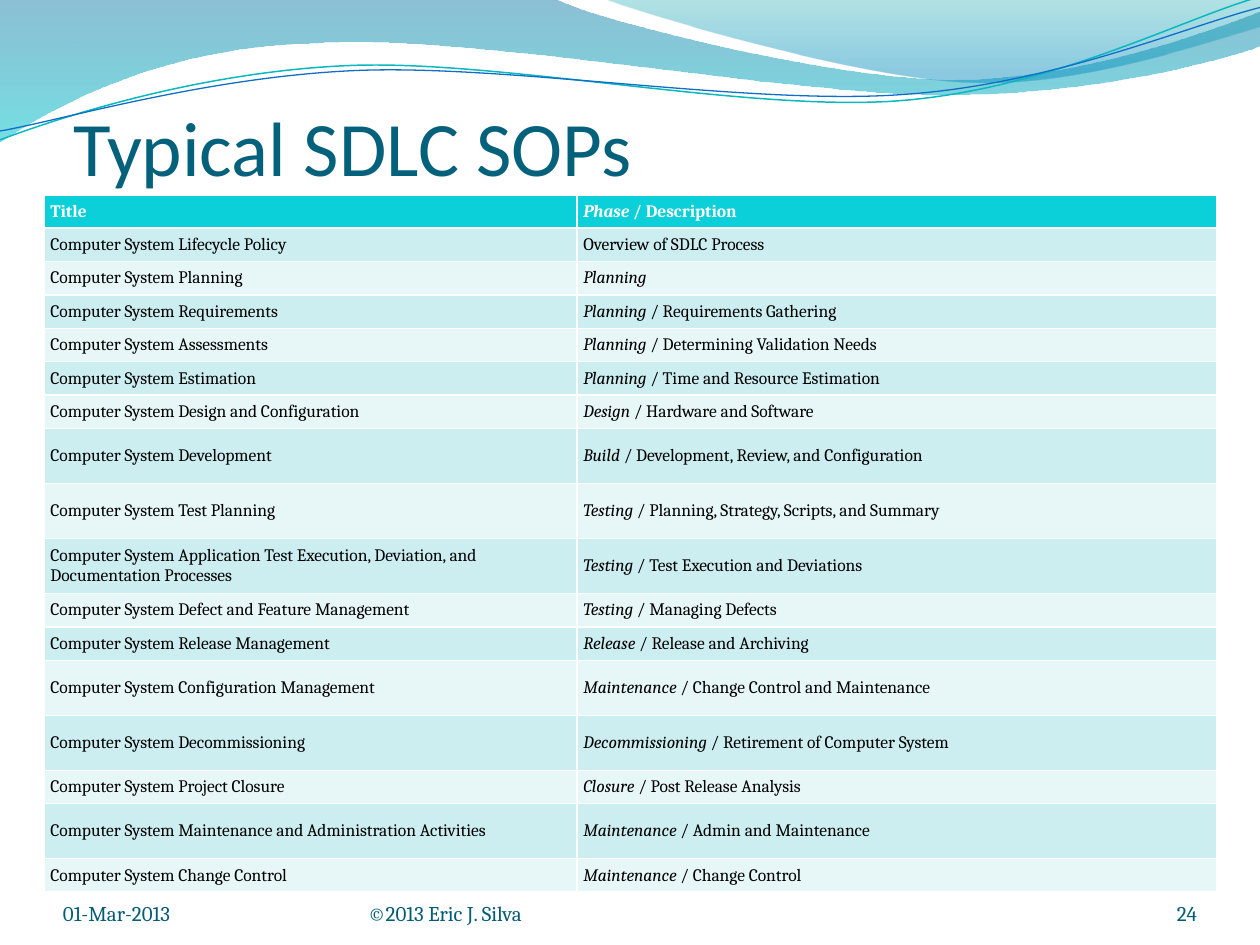
import math
from dataclasses import dataclass

from lxml import etree
from pptx import Presentation
from pptx.dml.color import RGBColor
from pptx.enum import text
from pptx.oxml import ns
from pptx.util import Inches, Pt


@dataclass(frozen=True)
class Theme:
    heading: str = "Calibri"
    body: str = "Cambria"
    title_size: int = 44
    cell_size: int = 10
    footer_size: int = 12
    title: str = "04617B"
    footer: str = "045D75"
    white: str = "FFFFFF"
    black: str = "000000"
    header: str = "0BD0D9"
    bands: tuple = ("CCEEF1", "E7F7F8")
    wide_wave: tuple = ((0, "0074A1", 45), (1, "00C6CF", 55))
    right_wave: tuple = ((0, "00A1A9", 30), (0.8, "008BBF", 45))
    teal_line: str = "0AB8BF"
    blue_line: str = "0F6FC6"


T = Theme()

ROWS = [
    ("Computer System Lifecycle Policy", "", "Overview of SDLC Process"),
    ("Computer System Planning", "Planning", ""),
    ("Computer System Requirements", "Planning", " / Requirements Gathering"),
    ("Computer System Assessments", "Planning", " / Determining Validation Needs"),
    ("Computer System Estimation", "Planning", " / Time and Resource Estimation"),
    ("Computer System Design and Configuration", "Design", " / Hardware and Software"),
    ("Computer System Development", "Build", " / Development, Review, and Configuration"),
    ("Computer System Test Planning", "Testing", " / Planning, Strategy, Scripts, and Summary"),
    ("Computer System Application Test Execution, Deviation, and Documentation Processes",
     "Testing", " / Test Execution and Deviations"),
    ("Computer System Defect and Feature Management", "Testing", " / Managing Defects"),
    ("Computer System Release Management", "Release", " / Release and Archiving"),
    ("Computer System Configuration Management", "Maintenance", " / Change Control and Maintenance"),
    ("Computer System Decommissioning", "Decommissioning", " / Retirement of Computer System"),
    ("Computer System Project Closure", "Closure", " / Post Release Analysis"),
    ("Computer System Maintenance and Administration Activities",
     "Maintenance", " / Admin and Maintenance"),
    ("Computer System Change Control", "Maintenance", " / Change Control"),
]
TALL_ROWS = {7, 8, 9, 12, 13, 15}

WIDE_WAVE = [
    [(0, 0)], [(4.4, -0.01)],
    [(4.76, 0.17), (6.64, 0.63), (7.58, 0.63)],
    [(8.53, 0.63), (9.58, 0.26), (10, 0.09)],
    [(10.01, 0.36)],
    [(9.83, 0.44), (8.7, 0.76), (7.46, 0.75)],
    [(6.22, 0.75), (3.82, 0.28), (2.57, 0.34)],
    [(1.29, 0.36), (0.46, 0.83), (-0.01, 1.13)],
    [(0, 0)],
]
RIGHT_WAVE = [
    [(4.79, -0.01)],
    [(5.09, 0.11), (6.82, 0.62), (7.69, 0.65)],
    [(8.56, 0.69), (9.61, 0.32), (10, 0.21)],
    [(10, 0)], [(4.79, -0.01)],
]
TEAL_LINE = [
    [(0, 1.11)],
    [(0.48, 0.93), (1.58, 0.57), (2.77, 0.52)],
    [(3.95, 0.47), (5.93, 0.89), (7.13, 0.8)],
    [(8.33, 0.71), (9.38, 0.15), (9.98, -0.02)],
]
BLUE_LINE = [
    [(0, 1.04)],
    [(0.47, 0.96), (1.64, 0.61), (2.83, 0.56)],
    [(4.03, 0.51), (5.97, 0.84), (7.17, 0.75)],
    [(8.36, 0.67), (9.41, 0.21), (10, 0.06)],
]
LINE_TILT = -2.7


def rgb(value):
    return RGBColor.from_string(value)


def set_all(obj, values):
    for name, value in values.items():
        setattr(obj, name, value)


def write(p, runs, color, **font):
    for words, italic in runs:
        if words:
            r = p.add_run()
            r.text = words
            set_all(r.font, dict(font, italic=italic))
            r.font.color.rgb = rgb(color)


def turn(segments, center, degrees):
    cx, cy = center
    cos, sin = math.cos(math.radians(degrees)), math.sin(math.radians(degrees))
    return [[(cx + (x - cx) * cos - (y - cy) * sin, cy + (x - cx) * sin + (y - cy) * cos)
             for x, y in seg] for seg in segments]


def add_curve(s, left, top, segments, close):
    points = [(left + Inches(x), top + Inches(y)) for seg in segments for x, y in seg]
    builder = s.shapes.build_freeform(*points[0])
    builder.add_line_segments(points[1:], close=close)
    sp = builder.convert_to_shape()
    sp.shadow.inherit = False
    nodes = iter(list(sp.element.spPr.find(f".//{ns.qn('a:path')}")))
    for seg in segments:
        group = [next(nodes) for _ in seg]
        if len(group) == 3:
            curve = etree.Element(ns.qn("a:cubicBezTo"))
            group[0].addprevious(curve)
            for node in group:
                curve.append(node[0])
                node.getparent().remove(node)
    return sp


def add_waves(s, left, top):
    for segments, stops in ((WIDE_WAVE, T.wide_wave), (RIGHT_WAVE, T.right_wave)):
        sp = add_curve(s, left, top, segments, True)
        sp.line.fill.background()
        sp.fill.gradient()
        sp.fill.gradient_angle = 270
        for stop, (position, color, _) in zip(sp.fill.gradient_stops, stops):
            stop.position = position
            stop.color.rgb = rgb(color)
        for node, (_, _, opacity) in zip(sp.element.spPr.iter(ns.qn("a:srgbClr")), stops):
            etree.SubElement(node, ns.qn("a:alpha"), val=str(opacity * 1000))
    for segments, center, color, width in ((TEAL_LINE, (4.99, 0.58), T.teal_line, 0.85),
                                           (BLUE_LINE, (5, 0.59), T.blue_line, 0.75)):
        sp = add_curve(s, left, top, turn(segments, center, -LINE_TILT), False)
        sp.rotation = LINE_TILT
        sp.fill.background()
        sp.line.color.rgb = rgb(color)
        sp.line.width = Pt(width)


def add_title(s, left, top, width, height):
    sp = s.shapes.title
    set_all(sp, dict(left=left, top=top, width=width, height=height))
    tf = sp.text_frame
    set_all(tf, dict(margin_left=0, margin_right=0, margin_top=Inches(0.05), margin_bottom=0,
                     vertical_anchor=text.MSO_ANCHOR.BOTTOM, word_wrap=True,
                     auto_size=text.MSO_AUTO_SIZE.NONE))
    p = tf.paragraphs[0]
    p.alignment = text.PP_ALIGN.LEFT
    write(p, [("Typical SDLC SOPs", False)], T.title, name=T.heading, size=Pt(T.title_size))
    sp.element.getparent().append(sp.element)


def add_sop_table(s, left, top, width, height):
    rows = [("Title", "Phase", " / Description"), *ROWS]
    table = s.shapes.add_table(len(rows), 2, left, top, width, height).table
    table.columns[0].width = Inches(4.23)
    table.columns[1].width = width - Inches(4.23)
    header, short = Inches(0.26), Inches(0.53) // 2
    tall = (height - header - short * (len(ROWS) - len(TALL_ROWS))) // len(TALL_ROWS)
    for i, (title, phase, description) in enumerate(rows):
        is_header = i == 0
        table.rows[i].height = header if is_header else tall if i in TALL_ROWS else short
        contents = [(title, False)], [(phase, True), (description, False)]
        for cell, runs in zip(table.rows[i].cells, contents):
            cell.fill.solid()
            cell.fill.fore_color.rgb = rgb(T.header if is_header else T.bands[(i - 1) % 2])
            margins = {f"margin_{side}": Inches(0.05) for side in ("left", "right", "top", "bottom")}
            set_all(cell, dict(margins, vertical_anchor=text.MSO_ANCHOR.MIDDLE))
            write(cell.text_frame.paragraphs[0], runs, T.white if is_header else T.black,
                  name=T.body, size=Pt(T.cell_size), bold=is_header)


def add_footer(s, left, top, width, height):
    for words, offset, part_width, align in (
            ("01-Mar-2013", 0, Inches(2.33), text.PP_ALIGN.LEFT),
            ("©2013 Eric J. Silva", Inches(2.42), Inches(3.67), text.PP_ALIGN.LEFT),
            ("24", width - Inches(0.83), Inches(0.83), text.PP_ALIGN.RIGHT)):
        tf = s.shapes.add_textbox(left + offset, top, part_width, height).text_frame
        set_all(tf, dict(margin_left=0, margin_right=0, margin_top=0, margin_bottom=0,
                         vertical_anchor=text.MSO_ANCHOR.BOTTOM, word_wrap=True))
        p = tf.paragraphs[0]
        p.alignment = align
        write(p, [(words, False)], T.footer, name=T.body, size=Pt(T.footer_size))


prs = Presentation()
prs.slide_width, prs.slide_height = Inches(10), Inches(7.5)
s = prs.slides.add_slide(prs.slide_layouts[5])
add_waves(s, 0, 0)
add_title(s, Inches(0.58), Inches(0.83), Inches(9), Inches(0.69))
add_sop_table(s, Inches(0.35), Inches(1.55), Inches(9.31), Inches(5.53))
add_footer(s, Inches(0.5), Inches(6.95), Inches(9), Inches(0.4))
prs.save("out.pptx")
